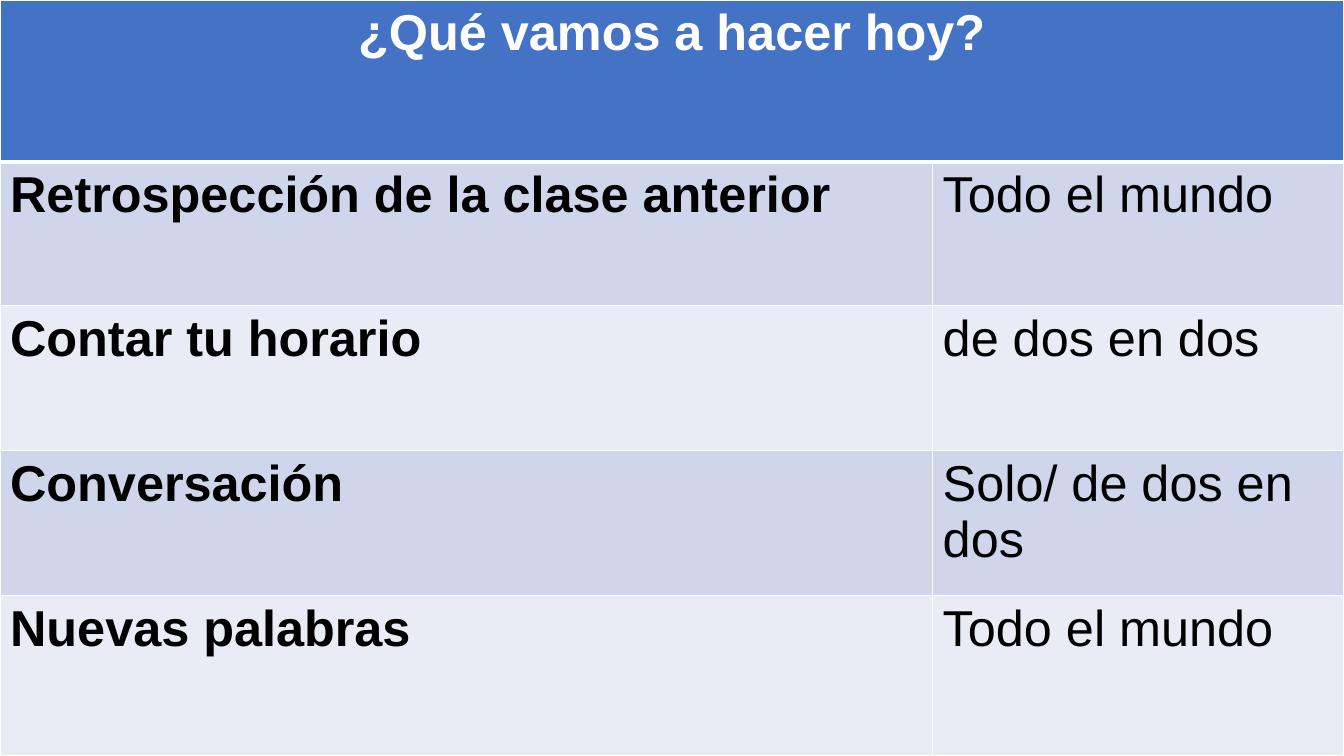
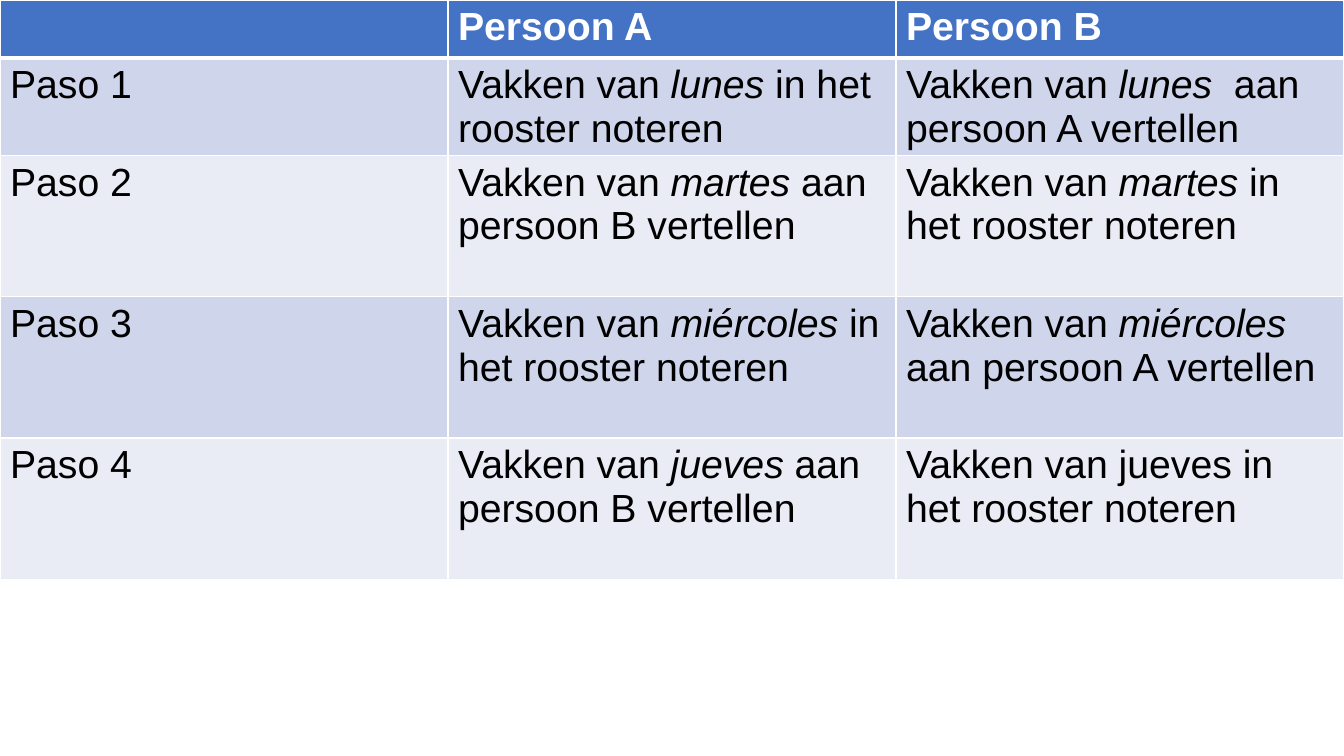
import pptx
import pptx.util
import pptx.dml.color
import pptx.enum.text
import pptx.oxml.ns
from lxml import etree

Inches, Pt = pptx.util.Inches, pptx.util.Pt
Color = pptx.dml.color.RGBColor
Align = pptx.enum.text.PP_ALIGN

BLUE = Color(0x44, 0x72, 0xC4)
DARK = Color(0xCF, 0xD5, 0xEA)
LIGHT = Color(0xE9, 0xEB, 0xF5)
WHITE = Color(0xFF, 0xFF, 0xFF)
BLACK = Color(0, 0, 0)
FONT = "Arial"
WIDE, HIGH = 13.33, 7.5

PLAN = [
    ["¿Qué vamos a hacer hoy?", ""],
    ["Retrospección de la clase anterior", "Todo el mundo"],
    ["Contar tu horario", "de dos en dos"],
    ["Conversación", "Solo/ de dos en dos"],
    ["Nuevas palabras", "Todo el mundo"],
]
# Words between asterisks are italic
STEPS = [
    ["", "Persoon A", "Persoon B"],
    ["Paso 1", "Vakken van *lunes* in het rooster noteren",
     "Vakken van *lunes * aan persoon A vertellen"],
    ["Paso 2", "Vakken van *martes *aan persoon B vertellen",
     "Vakken van *martes* in het rooster noteren"],
    ["Paso 3", "Vakken van *miércoles* in het rooster noteren",
     "Vakken van *miércoles* aan persoon A vertellen"],
    ["Paso 4", "Vakken van *jueves *aan persoon B vertellen",
     "Vakken van jueves in het rooster noteren"],
]


def write(frame, text, size=28, color=BLACK, bold=False, align=Align.LEFT):
    """Fill the first paragraph, with italics between asterisks."""
    para = frame.paragraphs[0]
    para.alignment = align
    para.font.size = Pt(size)
    for index, part in enumerate(text.split("*")):
        if part:
            run = para.add_run()
            run.text = part
            font = run.font
            font.name, font.size = FONT, Pt(size)
            font.bold, font.italic = bold, index % 2 == 1
            font.color.rgb = color


def edge(cell, base):
    """Draw white borders; base is the bottom width in points."""
    props = cell._tc.get_or_add_tcPr()
    qn = pptx.oxml.ns.qn
    for index, side in enumerate("LRTB"):
        line = etree.Element(qn("a:ln" + side))
        line.set("w", str(Pt(base if side == "B" else 1)))
        fill = etree.SubElement(line, qn("a:solidFill"))
        etree.SubElement(fill, qn("a:srgbClr")).set("val", str(WHITE))
        props.insert(index, line)


def grid(slide, box, data, cols, rows, size, lead=False, join=False):
    """Place a banded table; cols and rows are shares of the box."""
    left, top, width, height = box
    frame = slide.shapes.add_table(
        len(rows), len(cols), Inches(left), Inches(top),
        Inches(width), Inches(height))
    table = frame.table
    table.first_row = table.horz_banding = False
    for col, share in zip(table.columns, cols):
        col.width = Inches(width * share / sum(cols))
    for row, share in zip(table.rows, rows):
        row.height = Inches(height * share / sum(rows))

    # Header, then alternating bands
    for r, texts in enumerate(data):
        head = r == 0
        for c, text in enumerate(texts):
            cell = table.cell(r, c)
            cell.fill.solid()
            cell.fill.fore_color.rgb = BLUE if head else (LIGHT, DARK)[r % 2]
            edge(cell, 3 if head else 1)
            write(cell.text_frame, text, size=size,
                  color=WHITE if head else BLACK,
                  bold=head or (lead and c == 0),
                  align=Align.CENTER if head and join else Align.LEFT)
    if join:
        table.cell(0, 0).merge(table.cell(0, len(cols) - 1))


def main():
    deck = pptx.Presentation()
    deck.slide_width, deck.slide_height = Inches(WIDE), Inches(HIGH)
    blank = deck.slide_layouts[6]

    # Plan for today
    grid(deck.slides.add_slide(blank), (0, 0, WIDE, HIGH), PLAN,
         cols=[9.25, 4.08], rows=[1.61, 1.42, 1.44, 1.44, 1.59],
         size=36, lead=True, join=True)

    # Steps for each partner
    grid(deck.slides.add_slide(blank), (0, 0, WIDE, HIGH * 0.76), STEPS,
         cols=[1, 1, 1], rows=[0.53, 0.97, 1.4, 1.4, 1.4], size=28)

    deck.save("out.pptx")


if __name__ == "__main__":
    main()
